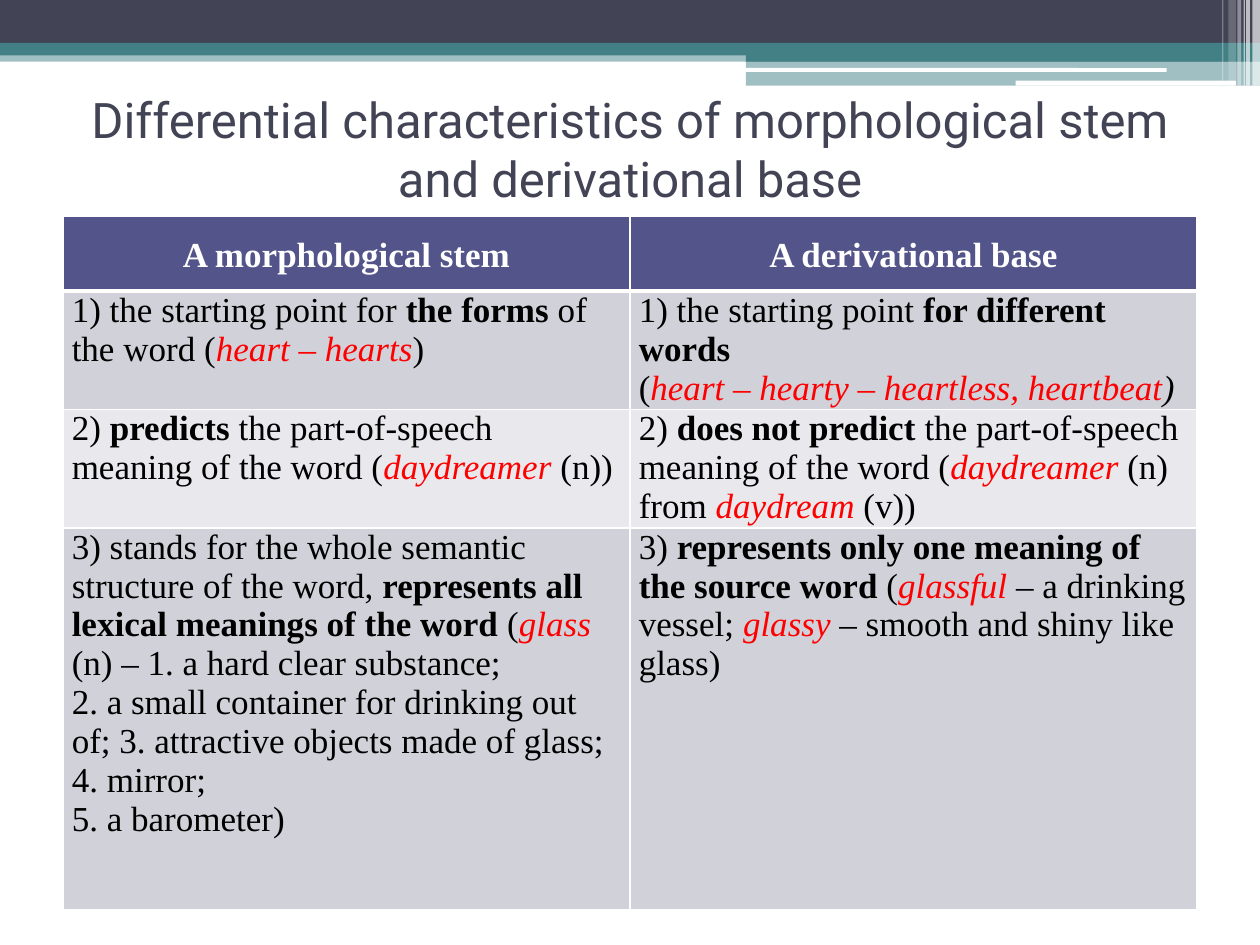
from lxml.etree import SubElement
from pptx import Presentation
from pptx.dml.color import RGBColor
from pptx.enum.shapes import MSO_SHAPE
from pptx.enum.text import MSO_ANCHOR, MSO_AUTO_SIZE, PP_ALIGN
from pptx.oxml.ns import qn
from pptx.util import Inches, Pt

COLUMN = ROW = Inches(0.01)
COLUMNS, ROWS = 1000, 750
NAVY, TEAL, WHITE, BLACK, RED = "424456", "438086", "FFFFFF", "000000", "FF0000"
HEADER, BANDS = "53548A", ("D1D1DA", "E9E9ED")

BARS = [
    (0, 40, 1000, 9, TEAL, 50),
    (0, 0, 1000, 34, NAVY, 100),
    (0, 34, 1000, 10, TEAL, 100),
    (592, 39, 408, 10, TEAL, 100),
    (592, 48, 408, 20, TEAL, 50),
]
PILLS = [(591, 54, 335, 3, WHITE, 100), (806, 64, 175, 4, WHITE, 100)]
STRIPES = [
    (994, 0, 6, 68, WHITE, 65),
    (989, 0, 3, 68, WHITE, 65),
    (987, 0, 1, 68, WHITE, 60),
    (982, 0, 3, 68, WHITE, 40),
    (975, 0, 6, 64, WHITE, 20),
    (970, 0, 1, 64, WHITE, 30),
]

PLAIN = {"bold": False, "italic": False}
STYLES = {
    "plain": (PLAIN, BLACK),
    "bold": ({"bold": True, "italic": False}, BLACK),
    "example": ({"bold": False, "italic": True}, RED),
    "slanted": ({"bold": False, "italic": True}, BLACK),
    "header": ({"bold": True, "italic": False}, WHITE),
}
MARKS = {"*": "bold", "_": "example", "~": "slanted"}

TITLE = "Differential characteristics of morphological stem and derivational base"
HEADINGS = ("A morphological stem", "A derivational base")
COMPARISON = [
    (
        ["1) the starting point for |*the forms| of the word (|_heart – hearts|)"],
        ["1) the starting point |*for different words",
         "(|_heart – hearty – heartless, heartbeat|~)"],
    ),
    (
        ["2) |*predicts| the part-of-speech meaning of the word (|_daydreamer |(n))"],
        ["2) |*does not predict| the part-of-speech meaning of the word "
         "(|_daydreamer| (n) from |_daydream| (v))"],
    ),
    (
        ["3) stands for the whole semantic structure of the word, "
         "|*represents all lexical meanings of the word| (|_glass"
         "| (n) – 1. a hard clear substance;",
         "2. a small container for drinking out of; "
         "3. attractive objects made of glass;",
         "4. mirror;",
         "5. a barometer)"],
        ["3) |*represents only one meaning of the source word| (|_glassful "
         "|– a drinking vessel; |_glassy |– smooth and shiny like glass)"],
    ),
]
ROW_HEIGHTS = (59, 94, 94, 303)


def color(value):
    return RGBColor.from_string(value)


def apply_format(target, values):
    for name, value in values.items():
        setattr(target, name, value)


def place(box):
    left, top, width, height = box
    return left * COLUMN, top * ROW, width * COLUMN, height * ROW


def add_bar(page, kind, box, fill, opacity):
    shape = page.shapes.add_shape(kind, *place(box))
    shape.shadow.inherit = False
    shape.fill.solid()
    shape.fill.fore_color.rgb = color(fill)
    shape.line.fill.background()
    if opacity < 100:
        tint = shape.fill._xPr.find(qn("a:solidFill"))[0]
        SubElement(tint, qn("a:alpha"), val=str(opacity * 1000))


def add_band(page, box):
    groups = (
        (MSO_SHAPE.RECTANGLE, BARS),
        (MSO_SHAPE.ROUNDED_RECTANGLE, PILLS),
        (MSO_SHAPE.RECTANGLE, STRIPES),
    )
    for kind, parts in groups:
        for left, top, width, height, fill, opacity in parts:
            part_box = (box[0] + left, box[1] + top, width, height)
            add_bar(page, kind, part_box, fill, opacity)


def add_title(page, box):
    title = page.shapes.title
    title.element.getparent().append(title.element)
    apply_format(title, dict(zip(("left", "top", "width", "height"), place(box))))
    frame = title.text_frame
    frame.text = TITLE
    apply_format(frame, {
        "word_wrap": True,
        "auto_size": MSO_AUTO_SIZE.NONE,
        "vertical_anchor": MSO_ANCHOR.MIDDLE,
    })
    para = frame.paragraphs[0]
    para.alignment = PP_ALIGN.CENTER
    font = para.runs[0].font
    apply_format(font, {"name": "Roboto", "size": Pt(28)})
    font.color.rgb = color(NAVY)


def add_span(para, text, style):
    span = para.add_run()
    span.text = text
    values, ink = STYLES[style]
    apply_format(span.font, {"name": "Times New Roman", "size": Pt(20), **values})
    span.font.color.rgb = color(ink)


def add_marked_text(para, line):
    for piece in line.split("|"):
        style = MARKS.get(piece[0], "plain")
        add_span(para, piece if style == "plain" else piece[1:], style)


def set_borders(cell, bottom):
    properties = cell._tc.get_or_add_tcPr()
    widths = {"a:lnL": 1, "a:lnR": 1, "a:lnT": 1, "a:lnB": bottom}
    for position, (tag, points) in enumerate(widths.items()):
        line = properties.makeelement(qn(tag), {"w": str(Pt(points))})
        fill = SubElement(line, qn("a:solidFill"))
        SubElement(fill, qn("a:srgbClr"), val=WHITE)
        properties.insert(position, line)


def format_cell(cell, fill, bottom):
    apply_format(cell, {
        "margin_left": Inches(0.07),
        "margin_right": Inches(0.07),
        "margin_top": 0,
        "margin_bottom": 0,
    })
    cell.fill.solid()
    cell.fill.fore_color.rgb = color(fill)
    set_borders(cell, bottom)


def add_comparison(page, box):
    shape = page.shapes.add_table(len(ROW_HEIGHTS), len(HEADINGS), *place(box))
    table = shape.table
    for row, height in zip(table.rows, ROW_HEIGHTS):
        row.height = height * ROW
    for index, heading in enumerate(HEADINGS):
        cell = table.cell(0, index)
        format_cell(cell, HEADER, 3)
        para = cell.text_frame.paragraphs[0]
        apply_format(para, {"alignment": PP_ALIGN.CENTER, "line_spacing": 1.5})
        add_span(para, heading, "header")
    for number, entries in enumerate(COMPARISON, 1):
        for index, lines in enumerate(entries):
            cell = table.cell(number, index)
            format_cell(cell, BANDS[(number - 1) % 2], 1)
            frame = cell.text_frame
            for order, line in enumerate(lines):
                para = frame.add_paragraph() if order else frame.paragraphs[0]
                add_marked_text(para, line)


def main():
    deck = Presentation()
    apply_format(deck, {"slide_width": COLUMNS * COLUMN, "slide_height": ROWS * ROW})
    page = deck.slides.add_slide(deck.slide_layouts.get_by_name("Title Only"))
    add_band(page, (0, 0, COLUMNS, 68))
    add_title(page, (50, 55, 900, 125))
    add_comparison(page, (50, 172, 900, sum(ROW_HEIGHTS)))
    deck.save("out.pptx")


if __name__ == "__main__":
    main()
